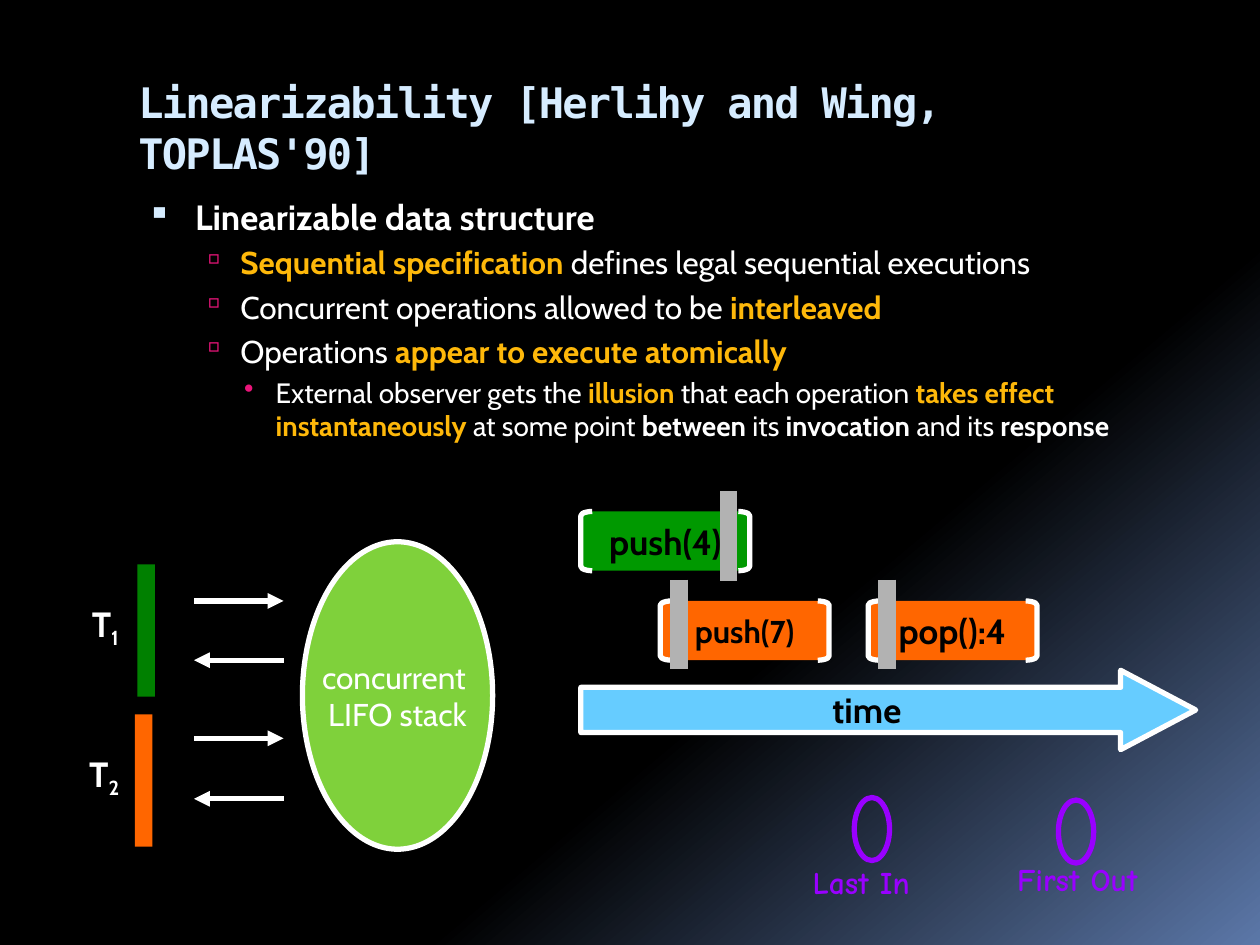
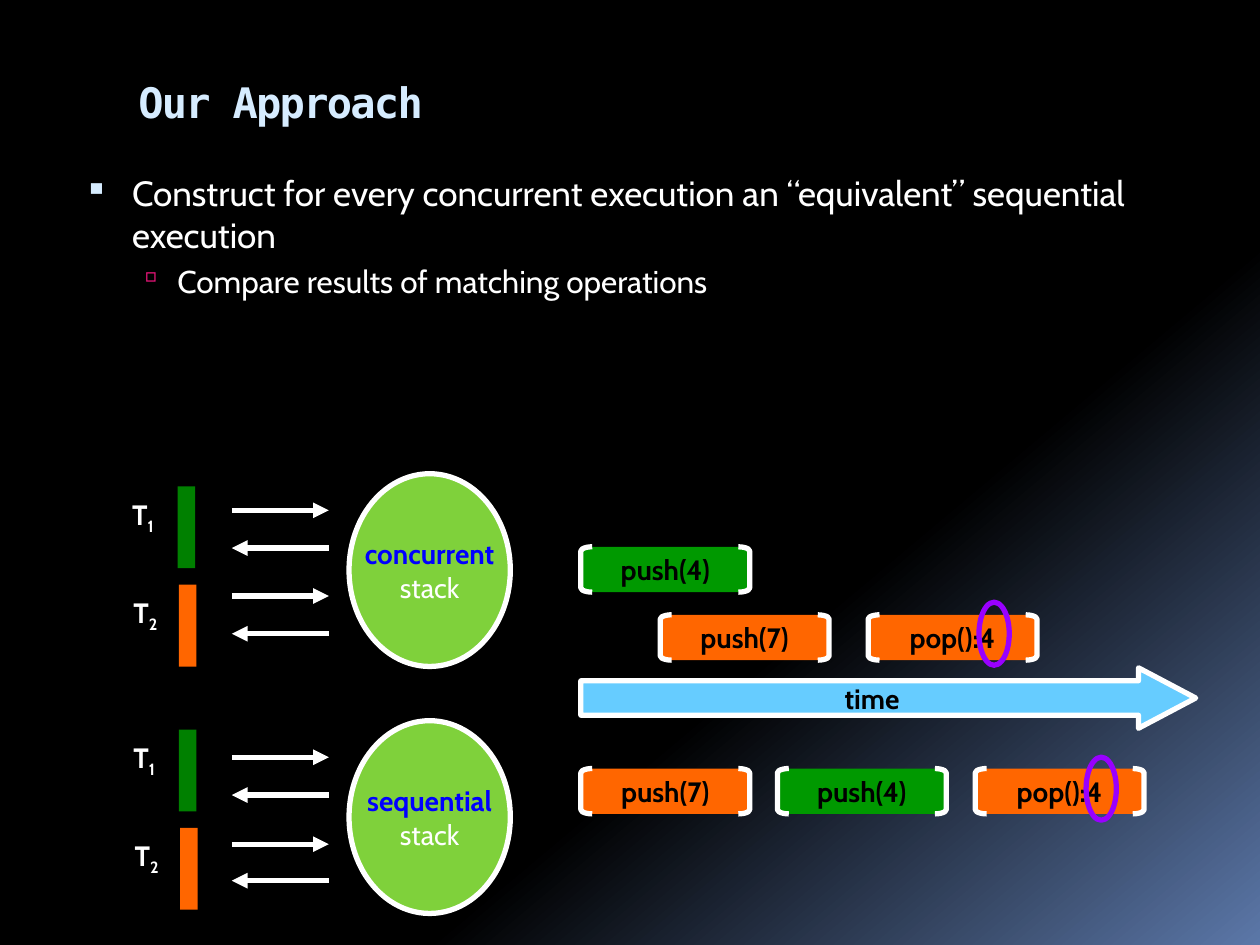
from copy import deepcopy

from lxml import etree
from pptx import Presentation
from pptx.dml.color import RGBColor
from pptx.enum import shapes, text
from pptx.oxml import ns
from pptx.util import Inches, Pt

HEX = {
    "black": "000000", "white": "FFFFFF", "dusk": "5B77A8", "pale": "D6ECFF",
    "gold": "FEB80A", "pink": "EA157A", "sky": "66CCFF", "leaf": "009900",
    "green": "008000", "orange": "FF6600", "violet": "9900FF",
    "gray": "B2B2B2", "lime": "7FD13B", "blue": "0000FF",
}
SANS, MONO, COMIC = "Cabin", "DejaVu Sans Mono", "Comic Neue"
KIND = shapes.MSO_SHAPE

# Run formats
BOLD = {"bold": True}
PLAIN = {"bold": False}
GOLD = {"bold": True, "color": "gold"}
BLUE = {"bold": True, "color": "blue"}

# Bullet levels: left margin, hanging indent, space before, sign, colour, percent, size
LEVELS = [
    (0.45, -0.38, 7, "▪", "pale", 95, 20),
    (0.81, -0.31, 3.6, "▫", "pink", 90, 18),
    (1.09, -0.25, 3.2, "•", "pink", 100, 16),
]

# Content: bullets are (level, runs); calls are (name, left, top, text size);
# stacks give the oval, the arrows and the thread bars
SLIDES = [
    {
        "title": "Linearizability [Herlihy and Wing, TOPLAS'90]",
        "body": (1, 1.5, 8.5, 5),
        "bullets": [
            (0, [("Linearizable data structure", BOLD)]),
            (1, [("Sequential specification ", GOLD),
                 "defines legal sequential executions"]),
            (1, ["Concurrent operations allowed to be ", ("interleaved", GOLD)]),
            (1, ["Operations ", ("appear to execute atomically", GOLD)]),
            (2, ["External observer gets the ", ("illusion", GOLD),
                 " that each operation ",
                 ("takes effect instantaneously ", GOLD), "at some point ",
                 ("between ", BOLD), "its", (" invocation ", BOLD),
                 "and its", (" response", BOLD)]),
        ],
        "time": (4.61, 5.32, 4.88, 0.63), "size": 20, "tall": 0.47,
        "calls": [("push(4)", 4.61, 4.06, 20), ("pop():4", 6.89, 4.77, 20),
                  ("push(7)", 5.24, 4.77, 18)],
        "rings": [(6.78, 6.33, 0.28, 0.5), (8.4, 6.35, 0.28, 0.5)],
        "notes": [("Last In", (6.29, 6.8, 1.09, 0.4)),
                  ("First Out", (7.88, 6.78, 1.34, 0.4))],
        "marks": [(5.39, 4.6), (5.78, 3.9), (7.04, 4.6)],
        "stacks": [
            {"oval": (2.4, 4.3, 1.51, 2.44), "size": 18, "tag": 20,
             "lines": [["concurrent "], ["LIFO stack"]],
             "span": (1.54, 2.25), "rows": (4.77, 5.24, 5.86, 6.34),
             "bars": [(1.09, 4.48), (1.07, 5.67)], "tall": 1.05, "drop": 0.25},
        ],
    },
    {
        "title": "Our Approach",
        "body": (0.5, 1.31, 9, 4.95),
        "bullets": [
            (0, ["Construct for every concurrent execution an “equivalent” "
                 "sequential execution"]),
            (1, ["Compare results of matching operations"]),
        ],
        "time": (4.61, 5.3, 4.88, 0.48), "size": 16, "tall": 0.36,
        "calls": [("push(4)", 4.61, 4.34, 16), ("pop():4", 6.89, 4.88, 16),
                  ("push(7)", 5.24, 4.88, 16), ("push(4)", 6.17, 6.1, 16),
                  ("pop():4", 7.74, 6.1, 16), ("push(7)", 4.61, 6.1, 16)],
        "rings": [(8.62, 6.01, 0.24, 0.5), (7.77, 4.78, 0.24, 0.5)],
        "notes": [],
        "marks": [],
        "stacks": [
            {"oval": (2.77, top, 1.28, 1.53), "size": 16, "tag": 16,
             "lines": [[(word, BLUE)], ["stack"]],
             "span": (1.84, 2.61), "rows": rows,
             "bars": bars, "tall": 0.65, "drop": 0.04}
            for word, top, rows, bars in [
                ("concurrent", 3.76, (4.05, 4.35, 4.73, 5.03),
                 [(1.41, 3.86), (1.42, 4.64)]),
                ("sequential", 5.72, (6.01, 6.31, 6.7, 6.99),
                 [(1.42, 5.79), (1.43, 6.57)]),
            ]
        ],
    },
]


def rgb(name):
    return RGBColor.from_string(HEX[name])


def place(box):
    return [Inches(v) for v in box]


def add(node, tag, **attrs):
    return etree.SubElement(node, ns.qn(tag), attrs)


# Text: one paragraph of runs, each a string or (string, format)
def write(para, runs, size=20, font=SANS, color="white", bold=False,
          align=None, gap=None):
    para.alignment = align
    for item in runs:
        word, form = (item, {}) if isinstance(item, str) else item
        look = {"color": color, "bold": bold, **form}
        run = para.add_run()
        run.text = word
        run.font.size, run.font.name = Pt(size), font
        run.font.bold = look["bold"]
        run.font.color.rgb = rgb(look["color"])
        props = run.font._element
        if gap:
            props.set("spc", str(gap))
        if "base" in look:
            props.set("baseline", str(look["base"]))


def fill_text(shape, lines, wrap=False, anchor="MIDDLE", **form):
    frame = shape.text_frame
    frame.word_wrap = wrap
    frame.vertical_anchor = text.MSO_ANCHOR[anchor]
    for i, runs in enumerate(lines):
        para = frame.add_paragraph() if i else frame.paragraphs[0]
        write(para, runs, **form)


def label(slide, box, lines, **form):
    form = {"anchor": "TOP", **form}
    fill_text(slide.shapes.add_textbox(*place(box)), lines, **form)


# Shapes and lines
def draw(slide, kind, box, fill=None, line=None, adj=()):
    shape = slide.shapes.add_shape(kind, *place(box))
    shape.shadow.inherit = False
    if fill:
        shape.fill.solid()
        shape.fill.fore_color.rgb = rgb(fill)
    else:
        shape.fill.background()
    if line:
        shape.line.color.rgb = rgb(line)
        shape.line.width = Pt(3)
    else:
        shape.line.fill.background()
    for i, value in enumerate(adj):
        shape.adjustments[i] = value
    return shape


def stroke(slide, start, end, color="white", width=3, arrow=False):
    line = slide.shapes.add_connector(
        shapes.MSO_CONNECTOR.STRAIGHT, *place(start + end))
    line.line.color.rgb = rgb(color)
    line.line.width = Pt(width)
    if arrow:
        add(line.line._get_or_add_ln(), "a:tailEnd", type="triangle")
    add(line._element.spPr, "a:effectLst")


# Parts of a slide
def backdrop(slide):
    fill = slide.background.fill
    fill.gradient()
    fill.gradient_angle = 310
    for stop, pos, name in zip(fill.gradient_stops, (0.65, 1), ("black", "dusk")):
        stop.position = pos
        stop.color.rgb = rgb(name)
    dark = next(slide._element.iter(ns.qn("a:gs")))
    first = deepcopy(dark)
    first.set("pos", "0")
    dark.addprevious(first)


def bullets(slide, box, items):
    frame = slide.shapes.add_textbox(*place(box)).text_frame
    frame.word_wrap = True
    for i, (level, runs) in enumerate(items):
        left, hang, before, sign, color, scale, size = LEVELS[level]
        para = frame.add_paragraph() if i else frame.paragraphs[0]
        para.level = level
        para.space_before = Pt(before)
        write(para, runs, size=size)
        props = para._p.get_or_add_pPr()
        props.set("marL", str(Inches(left)))
        props.set("indent", str(Inches(hang)))
        add(add(props, "a:buClr"), "a:srgbClr", val=HEX[color])
        add(props, "a:buSzPct", val=str(scale * 1000))
        add(props, "a:buChar", char=sign)


def call(slide, name, x, y, size, tall):
    wide, edge = 1.34, 0.09
    color = "leaf" if name == "push(4)" else "orange"
    block = draw(slide, KIND.RECTANGLE, (x, y, wide, tall), color)
    fill_text(block, [[name]], size=size, color="black", bold=True,
              align=text.PP_ALIGN.CENTER)
    for kind, left in ((KIND.LEFT_BRACKET, x),
                       (KIND.RIGHT_BRACKET, x + wide - edge)):
        draw(slide, kind, (left, y, edge, tall), line="white", adj=[0.375])


def stack(slide, part):
    oval = draw(slide, KIND.OVAL, part["oval"], "lime", "white")
    fill_text(oval, part["lines"], size=part["size"],
              align=text.PP_ALIGN.CENTER)
    # Requests go right, replies go left
    for i, y in enumerate(part["rows"]):
        start, end = part["span"][::-1] if i % 2 else part["span"]
        stroke(slide, (start, y), (end, y), arrow=True)
    for i, (x, y) in enumerate(part["bars"]):
        draw(slide, KIND.RECTANGLE, (x, y, 0.14, part["tall"]),
             ("green", "orange")[i])
        label(slide, (x - 0.46, y + part["drop"], 0.52, 0.4),
              [["T", (str(i + 1), {"base": -25000})]],
              wrap=True, size=part["tag"], bold=True)


def build(deck, page):
    slide = deck.slides.add_slide(deck.slide_layouts[6])
    backdrop(slide)
    label(slide, (1, 0.56, 8.5, 1), [[page["title"]]], wrap=True, size=24,
          font=MONO, color="pale", bold=True, gap=-100)
    bullets(slide, page["body"], page["bullets"])
    # Timeline and calls
    arrow = draw(slide, KIND.RIGHT_ARROW, page["time"], "sky", "white",
                 [0.569, 0.946])
    fill_text(arrow, [["time"]], size=page["size"], color="black", bold=True,
              align=text.PP_ALIGN.CENTER)
    for item in page["calls"]:
        call(slide, *item, tall=page["tall"])
    # Highlights
    for ring in page["rings"]:
        draw(slide, KIND.OVAL, ring, line="violet")
    for word, box in page["notes"]:
        label(slide, box, [[word]], size=18, font=COMIC, color="violet",
              bold=True, align=text.PP_ALIGN.CENTER)
    for x, y in page["marks"]:
        stroke(slide, (x, y), (x, y + 0.71), "gray", 10)
    for part in page["stacks"]:
        stack(slide, part)


def main():
    deck = Presentation()
    deck.slide_width, deck.slide_height = Inches(10), Inches(7.5)
    for page in SLIDES:
        build(deck, page)
    deck.save("out.pptx")


if __name__ == "__main__":
    main()
